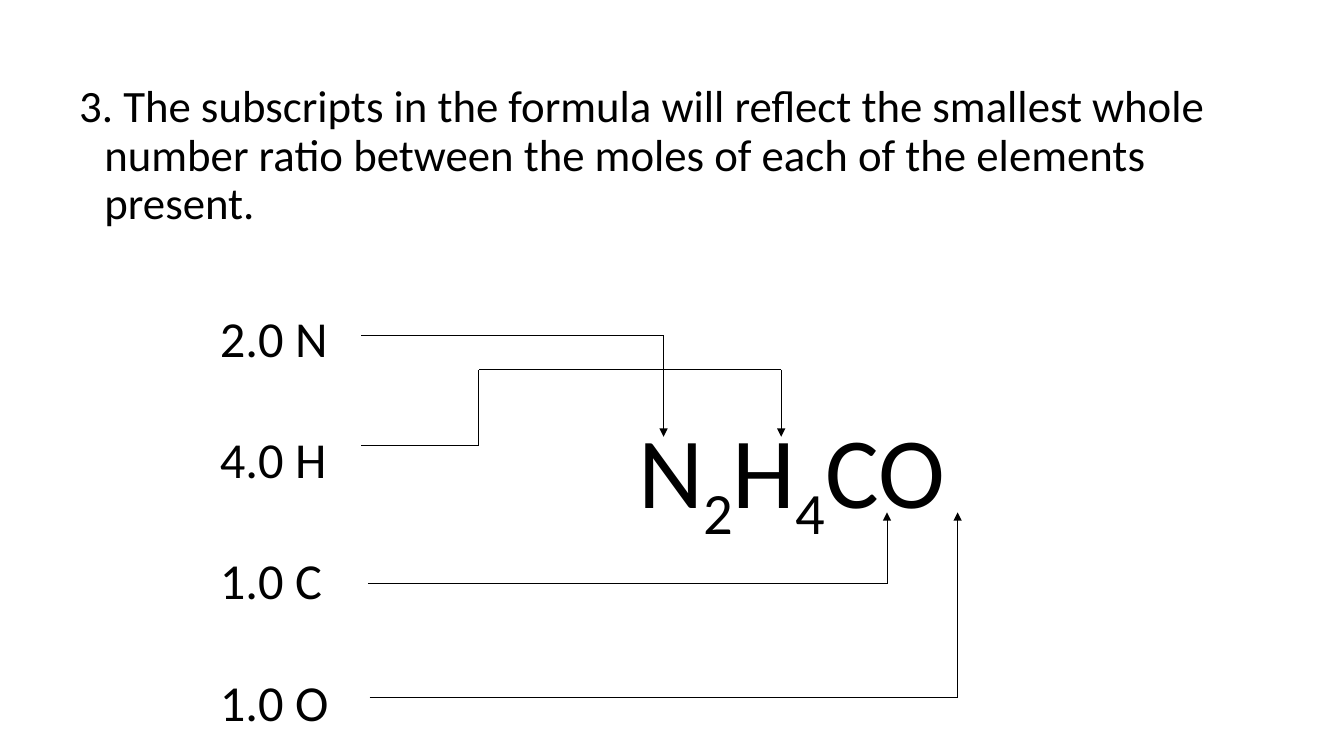
from itertools import pairwise

from lxml.etree import SubElement
from pptx import Presentation
from pptx.dml.color import RGBColor
from pptx.enum.shapes import MSO_CONNECTOR
from pptx.enum.text import MSO_AUTO_SIZE
from pptx.oxml.ns import qn
from pptx.util import Inches, Pt

COLS, ROWS = 160, 90
CELL = Inches(1) // 12


def color(code):
    """Turn a hex string into a colour."""
    return RGBColor.from_string(code)


def cells(*sizes):
    """Turn grid counts into lengths."""
    return [round(size * CELL) for size in sizes]


class Board:
    """Hold the style and the current slide."""

    font, ink, stroke = "Calibri", "000000", 0.75

    def __init__(self, deck):
        """Add a blank slide to the deck."""
        self.slide = deck.slides.add_slide(deck.slide_layouts[6])

    def text(self, area, lines, size, gap=0, wrap=True):
        """Write paragraphs, each a list of (text, baseline) pairs."""
        frame = self.slide.shapes.add_textbox(*cells(*area)).text_frame
        frame.word_wrap = wrap
        frame.auto_size = MSO_AUTO_SIZE.NONE if wrap else MSO_AUTO_SIZE.SHAPE_TO_FIT_TEXT
        for index, parts in enumerate(lines):
            para = frame.add_paragraph() if index else frame.paragraphs[0]
            para.space_before = Pt(gap)
            para.font.name = self.font
            para.font.size = Pt(size)
            para.font.color.rgb = color(self.ink)
            for words, base in parts:
                run = para.add_run()
                run.text = words
                if base:
                    run._r.get_or_add_rPr().set("baseline", str(base * 1000))
        return frame

    def hang(self, para, depth):
        """Give a paragraph a hanging indent and tight lines."""
        para.line_spacing = 0.9
        props = para._p.get_or_add_pPr()
        props.set("marL", str(depth))
        props.set("indent", str(-depth))

    def line(self, start, end, arrow=False):
        """Draw a straight line, with an arrowhead if asked."""
        link = self.slide.shapes.add_connector(
            MSO_CONNECTOR.STRAIGHT, *cells(*start, *end))
        link.line.width = Pt(self.stroke)
        link.line.color.rgb = color(self.ink)
        if arrow:
            SubElement(link.line._get_or_add_ln(), qn("a:tailEnd"), type="triangle")
        SubElement(link._element.spPr, qn("a:effectLst"))

    def route(self, *points):
        """Join points by lines that end in an arrowhead."""
        for start, end in pairwise(points):
            self.line(start, end, end == points[-1])


def main():
    """Build and save the slide."""
    deck = Presentation()
    deck.slide_width, deck.slide_height = cells(COLS, ROWS)
    board = Board(deck)

    rule = ("3. The subscripts in the formula will reflect the smallest whole "
            "number ratio between the moles of each of the elements present.")
    frame = board.text((8.25, 9.4, 140.4, 59.4), [[(rule, 0)]], 32, gap=10)
    board.hang(frame.paragraphs[0], Inches(0.25))

    moles = ["2.0 N", "4.0 H", "1.0 C", "1.0 O"]
    board.text((25, 36, 22, 51.7), [[(mole, 0)] for mole in moles], 36, gap=43.3)

    formula = [("N", 0), ("2", -25), ("H", 0), ("4", -25), ("CO", 0)]
    board.text((74.8, 48, 40.3, 15.7), [formula], 72, wrap=False)

    top, low = 52, 61
    board.route((43, 40), (79, 40), (79, top))
    board.route((43, 53), (57, 53), (57, 44), (93, 44), (93, top))
    board.route((43.8, 69.5), (105.6, 69.5), (105.6, low))
    board.route((44, 83), (114, 83), (114, low))

    deck.save("out.pptx")


if __name__ == "__main__":
    main()
